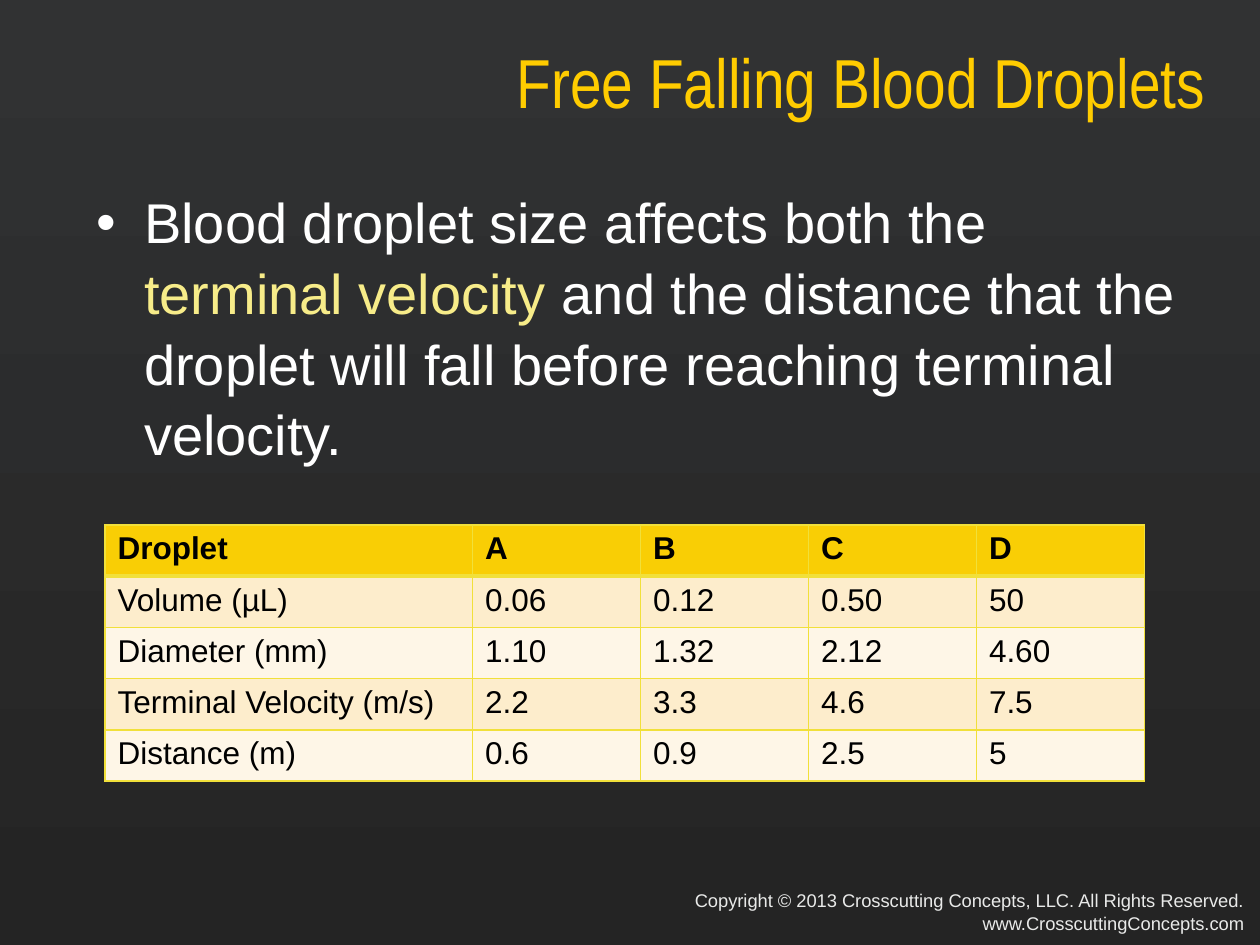
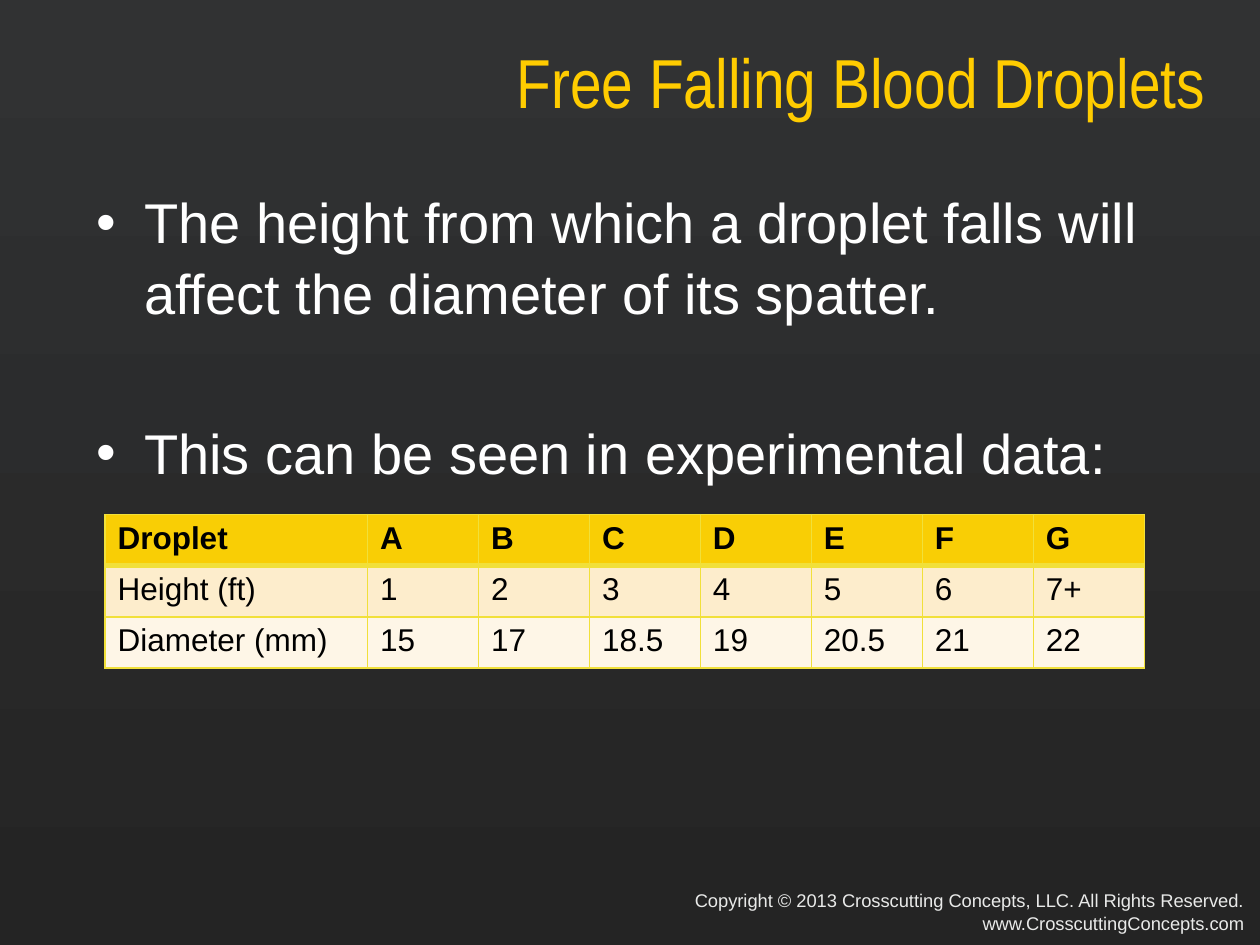
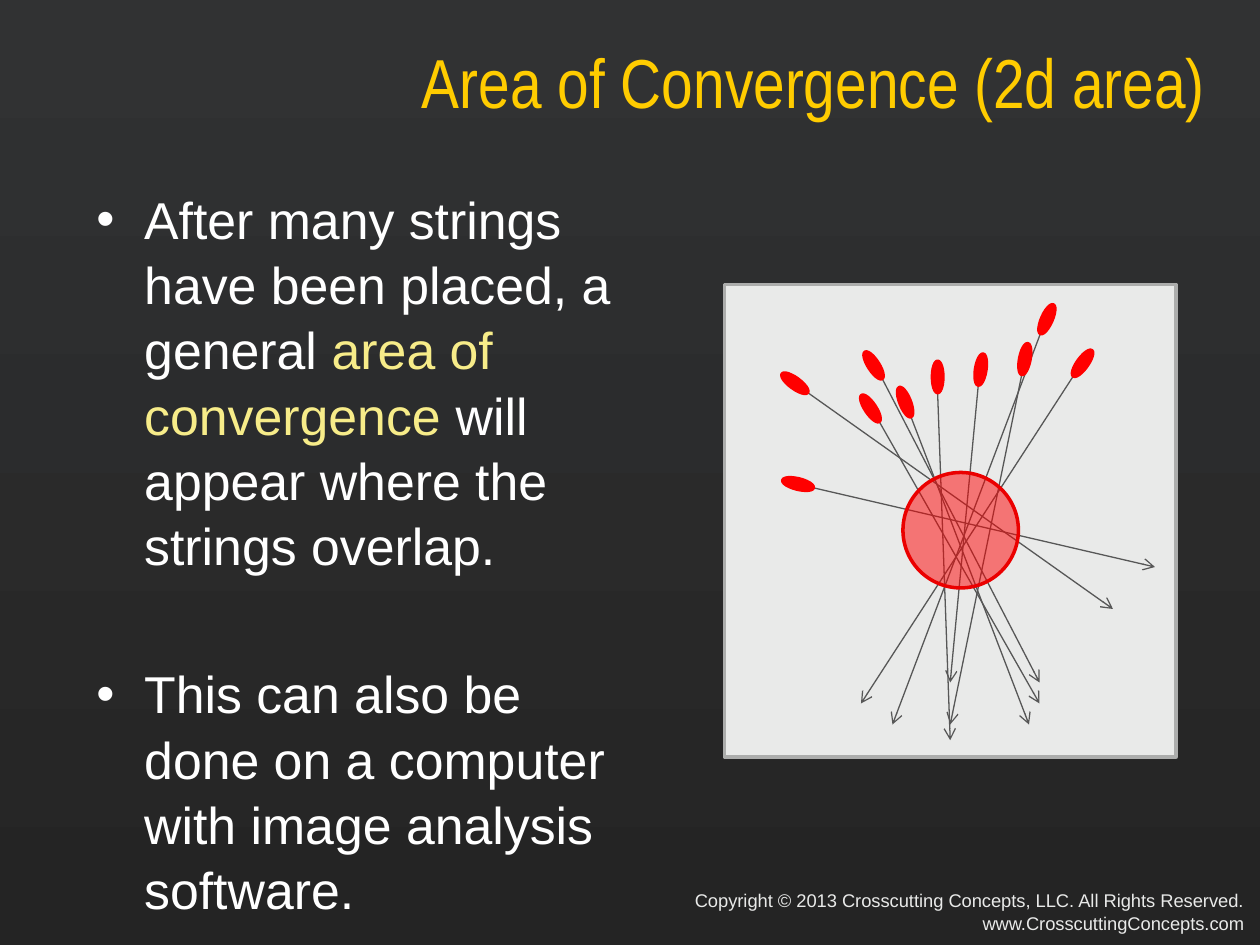
from math import cos, radians, sin

from lxml import etree
from pptx import Presentation
from pptx.dml.color import RGBColor
from pptx.enum.shapes import MSO_CONNECTOR, MSO_SHAPE
from pptx.enum.text import MSO_ANCHOR, MSO_AUTO_SIZE, PP_ALIGN
from pptx.oxml.ns import qn
from pptx.util import Inches, Pt

RIGHT = PP_ALIGN.RIGHT
MIDDLE = MSO_ANCHOR.MIDDLE
NO_AUTOFIT = MSO_AUTO_SIZE.NONE
STRAIGHT = MSO_CONNECTOR.STRAIGHT
RECTANGLE, OVAL = MSO_SHAPE.RECTANGLE, MSO_SHAPE.OVAL

BACKGROUND_TOP = RGBColor(0x31, 0x32, 0x33)
BACKGROUND_BOTTOM = RGBColor(0x24, 0x24, 0x24)
GOLD = RGBColor(0xFF, 0xCC, 0x00)
WHITE = RGBColor(0xFF, 0xFF, 0xFF)
BLACK = RGBColor(0x00, 0x00, 0x00)
KEY_TERM = RGBColor(0xF7, 0xEC, 0x89)
PALE_GREY = RGBColor(0xE9, 0xEA, 0xE9)
PANEL_EDGE = RGBColor(0xAC, 0xAD, 0xAC)
STRING_GREY = RGBColor(0x57, 0x57, 0x57)
RED = RGBColor(0xFF, 0x00, 0x00)
DARK_RED = RGBColor(0xEB, 0x00, 0x00)
HEADER_FILL = RGBColor(0xF9, 0xCE, 0x05)
ROW_FILLS = [RGBColor(0xFE, 0xF6, 0xE7), RGBColor(0xFD, 0xED, 0xCC)]
TABLE_BORDER = RGBColor(0xF1, 0xE0, 0x3A)

presentation = Presentation()
presentation.slide_width, presentation.slide_height = Inches(10), Inches(7.5)

# The grid has 120 columns and 90 rows of square units
UNIT = presentation.slide_width / 120
ROW_HEIGHT = 4.88
LINE_SPACING = 1.05
PARAGRAPH_GAP = 1.6  # share of the text size

TITLE_FONT = {"name": "Arial Narrow", "size": Pt(39.6)}
FOOTER_FONT = {"name": "Arial", "size": Pt(10.5)}
FOOTER_LINES = [
    "Copyright © 2013 Crosscutting Concepts, LLC. All Rights Reserved.",
    "www.CrosscuttingConcepts.com",
]


def grid(*units):
    return [round(unit * UNIT) for unit in units]


def write_runs(paragraph, runs, font_format):
    for text, color in runs:
        run = paragraph.add_run()
        run.text = text
        run.font.color.rgb = color
        for name, value in font_format.items():
            setattr(run.font, name, value)


# Content: bullets are lists of (text, colour) runs
pages = [
    {
        "title": "Free Falling Blood Droplets",
        "text_size": 32,
        "text_width": 107,
        "bullets": [[
            ("Blood droplet size affects both the ", WHITE),
            ("terminal velocity ", KEY_TERM),
            ("and the distance that the droplet will fall before reaching "
             "terminal velocity.", WHITE),
        ]],
        "table_top": 50,
        "label_width": 35,
        "rows": [
            ["Droplet", "A", "B", "C", "D"],
            ["Volume (µL)", "0.06", "0.12", "0.50", "50"],
            ["Diameter (mm)", "1.10", "1.32", "2.12", "4.60"],
            ["Terminal Velocity (m/s)", "2.2", "3.3", "4.6", "7.5"],
            ["Distance (m)", "0.6", "0.9", "2.5", "5"],
        ],
    },
    {
        "title": "Free Falling Blood Droplets",
        "text_size": 32,
        "text_width": 107,
        "bullets": [
            [("The height from which a droplet falls will affect the diameter "
              "of its spatter.", WHITE)],
            [("This can be seen in experimental data:", WHITE)],
        ],
        "table_top": 49,
        "label_width": 25,
        "rows": [
            ["Droplet", "A", "B", "C", "D", "E", "F", "G"],
            ["Height (ft)", "1", "2", "3", "4", "5", "6", "7+"],
            ["Diameter (mm)", "15", "17", "18.5", "19", "20.5", "21", "22"],
        ],
    },
    {
        "title": "Area of Convergence (2d area)",
        "text_size": 29.6,
        "text_width": 54,
        "bullets": [
            [("After many strings have been placed, a general ", WHITE),
             ("area of convergence ", KEY_TERM),
             ("will appear where the strings overlap.", WHITE)],
            [("This can also be done on a computer with image analysis "
              "software.", WHITE)],
        ],
    },
]

# Shared background
background = presentation.slide_master.background.fill
background.gradient()
background.gradient_angle = 270
for stop, color in zip(background.gradient_stops, [BACKGROUND_TOP, BACKGROUND_BOTTOM]):
    stop.color.rgb = color

for page in pages:
    slide = presentation.slides.add_slide(presentation.slide_layouts[5])

    # Footer
    footer = slide.shapes.add_textbox(*grid(40, 84, 79.7, 7.5)).text_frame
    footer.word_wrap = True
    for index, line in enumerate(FOOTER_LINES):
        paragraph = footer.add_paragraph() if index else footer.paragraphs[0]
        paragraph.alignment = RIGHT
        paragraph.line_spacing = LINE_SPACING
        write_runs(paragraph, [(line, PALE_GREY)], FOOTER_FONT)

    # Title
    title = slide.shapes.title
    title.left, title.top, title.width, title.height = grid(8, 4, 108, 7.4)
    title.text_frame.auto_size = NO_AUTOFIT
    title.text_frame.vertical_anchor = MIDDLE
    paragraph = title.text_frame.paragraphs[0]
    paragraph.alignment = RIGHT
    write_runs(paragraph, [(page["title"], GOLD)], TITLE_FONT)

    # Bullets
    body = slide.shapes.add_textbox(*grid(8, 17, page["text_width"], 66)).text_frame
    body.word_wrap = True
    for index, runs in enumerate(page["bullets"]):
        paragraph = body.add_paragraph() if index else body.paragraphs[0]
        properties = paragraph._p.get_or_add_pPr()
        properties.set("marL", str(Inches(0.38)))
        properties.set("indent", str(-Inches(0.38)))
        etree.SubElement(properties, qn("a:buFont")).set("typeface", "Arial")
        etree.SubElement(properties, qn("a:buChar")).set("char", "•")
        paragraph.line_spacing = LINE_SPACING
        if index:
            paragraph.space_before = Pt(PARAGRAPH_GAP * page["text_size"])
        paragraph.font.size = Pt(page["text_size"])
        paragraph.font.color.rgb = WHITE
        write_runs(paragraph, runs, {"name": "Arial", "size": Pt(page["text_size"])})

    # Table
    if "rows" not in page:
        continue
    rows = page["rows"]
    value_count = len(rows[0]) - 1
    value_width = (99 - page["label_width"]) / value_count
    table = slide.shapes.add_table(
        len(rows), value_count + 1,
        *grid(10, page["table_top"], 99, ROW_HEIGHT * len(rows))).table
    for column, width in zip(table.columns,
                             grid(page["label_width"], *[value_width] * value_count)):
        column.width = width
    for row_index, values in enumerate(rows):
        table.rows[row_index].height = grid(ROW_HEIGHT)[0]
        is_header = row_index == 0
        for column_index, value in enumerate(values):
            cell = table.cell(row_index, column_index)
            cell_properties = cell._tc.get_or_add_tcPr()
            for side in ("L", "R", "T", "B"):
                is_thick = (row_index, side) in [(0, "B"), (1, "T")]
                border = etree.SubElement(cell_properties, qn("a:ln" + side))
                border.set("w", str(Pt(3 if is_thick else 1)))
                border_fill = etree.SubElement(border, qn("a:solidFill"))
                etree.SubElement(border_fill, qn("a:srgbClr")).set("val", str(TABLE_BORDER))
            cell.fill.solid()
            cell.fill.fore_color.rgb = HEADER_FILL if is_header else ROW_FILLS[row_index % 2]
            write_runs(cell.text_frame.paragraphs[0], [(value, BLACK)],
                       {"name": "Arial", "size": Pt(18), "bold": is_header})

# Convergence diagram on the last slide: droplet centre, angle, string end
DROPLET_LENGTH, DROPLET_WIDTH = 3, 1
droplets = [
    (103.1, 34.6, 125.8, 82, 67),
    (93.4, 35.2, 98.8, 90.5, 65),
    (89.3, 35.9, 90, 90.5, 70.5),
    (99.7, 30.4, 113.9, 85, 69),
    (97.6, 34.2, 100.9, 90.5, 69),
    (82.9, 38.9, 56.2, 99, 67),
    (83.2, 34.8, 57.1, 99, 65),
    (86.2, 38.3, 68.3, 98, 69),
    (76, 46.1, 13.8, 110, 54),
    (75.7, 36.5, 36.1, 106, 58),
]

# Panel
panel = slide.shapes.add_shape(RECTANGLE, *grid(69, 27.1, 43, 45))
figures = [(panel, PALE_GREY, PANEL_EDGE)]

# Strings start at the tip of each droplet
for x, y, angle, end_x, end_y in droplets:
    tip_x = x + DROPLET_LENGTH / 2 * cos(radians(angle))
    tip_y = y + DROPLET_LENGTH / 2 * sin(radians(angle))
    string = slide.shapes.add_connector(STRAIGHT, *grid(tip_x, tip_y, end_x, end_y))
    string.line.color.rgb = STRING_GREY
    string.line.width = Pt(0.75)
    string_properties = string._element.spPr
    etree.SubElement(string_properties.find(qn("a:ln")), qn("a:tailEnd")).set("type", "arrow")
    etree.SubElement(string_properties, qn("a:effectLst"))

# Area of convergence and droplets
area = slide.shapes.add_shape(OVAL, *grid(86, 45, 11, 11))
figures.append((area, RED, DARK_RED))
for x, y, angle, end_x, end_y in droplets:
    droplet = slide.shapes.add_shape(OVAL, *grid(
        x - DROPLET_LENGTH / 2, y - DROPLET_WIDTH / 2, DROPLET_LENGTH, DROPLET_WIDTH))
    droplet.rotation = angle
    figures.append((droplet, RED, RED))

for shape, fill_color, line_color in figures:
    shape.shadow.inherit = False
    shape.fill.solid()
    shape.fill.fore_color.rgb = fill_color
    shape.line.color.rgb = line_color
    shape.line.width = Pt(2)

# Half-transparent fill of the area
area_color = area._element.spPr.find(qn("a:solidFill")).find(qn("a:srgbClr"))
etree.SubElement(area_color, qn("a:alpha")).set("val", "50000")

presentation.save("out.pptx")
